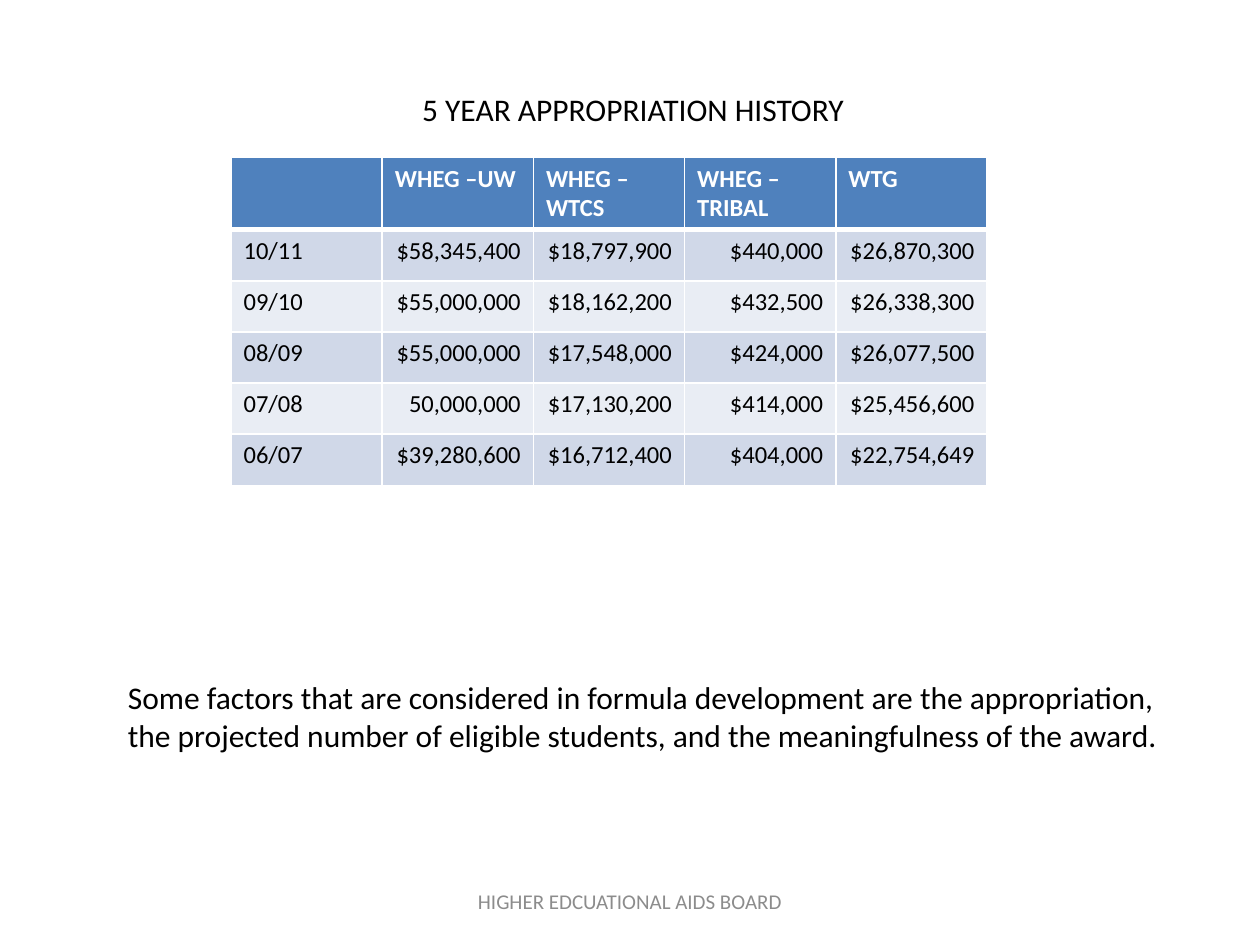
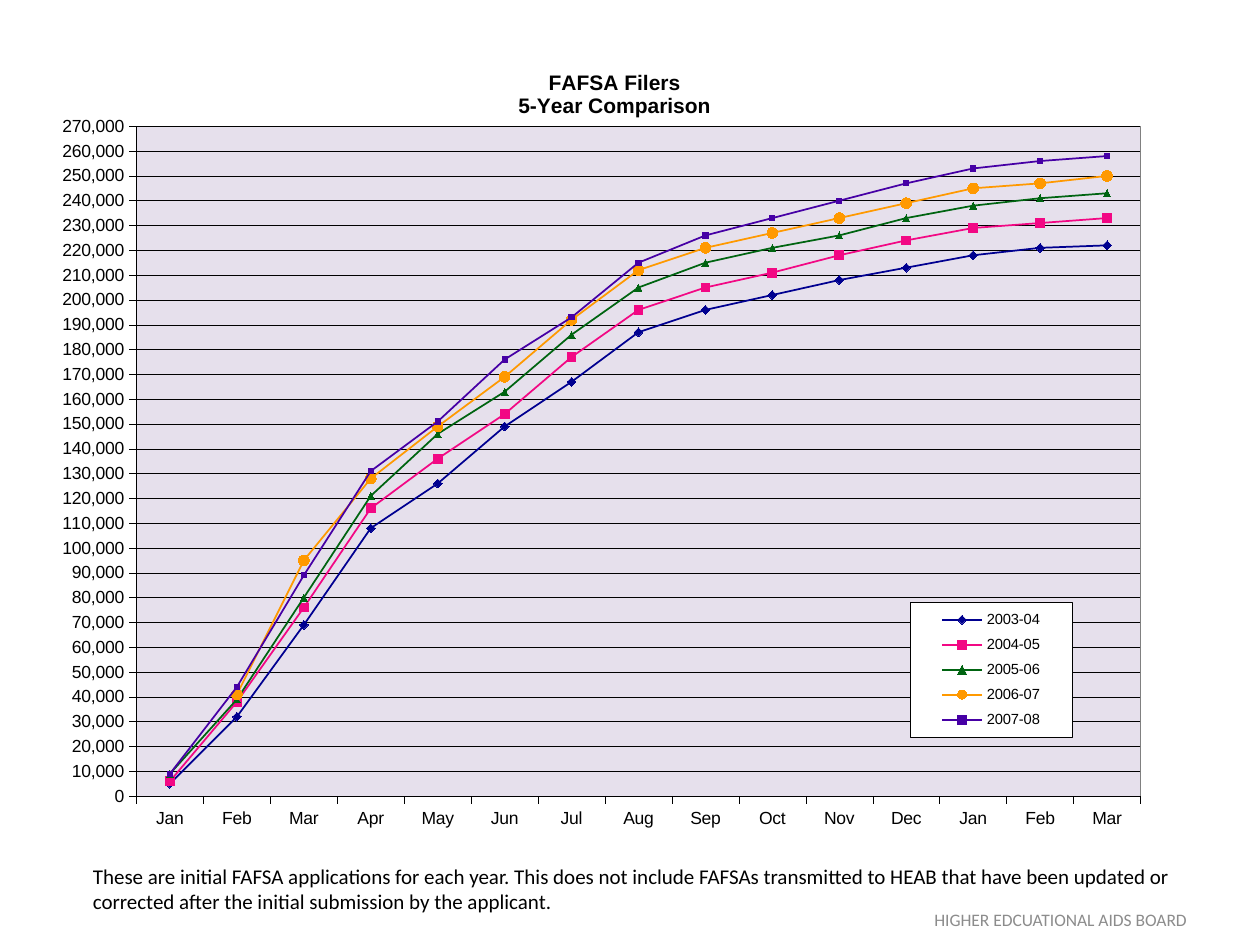
from lxml.etree import Element, SubElement
from pptx import Presentation
from pptx.chart.data import CategoryChartData
from pptx.dml.color import RGBColor
from pptx.enum.chart import XL_CHART_TYPE, XL_LEGEND_POSITION, XL_MARKER_STYLE, XL_TICK_MARK
from pptx.enum.text import MSO_ANCHOR, MSO_AUTO_SIZE, PP_ALIGN
from pptx.oxml.ns import qn
from pptx.util import Pt

COLORS = {
    "text": "000000", "footer": "8C8C8C", "white": "FFFFFF",
    "header": "4F81BD", "odd": "D0D8E8", "even": "E9EDF4",
    "plot": "E6E0EC", "plot_edge": "808080",
    "navy": "000090", "pink": "F20884", "green": "006411",
    "orange": "FF9900", "violet": "4600A5",
}
FOOTER = "HIGHER EDCUATIONAL AIDS BOARD"

HEADINGS = ["", "WHEG –UW", "WHEG – WTCS", "WHEG – TRIBAL", "WTG"]
APPROPRIATIONS = [
    ["10/11", "$58,345,400", "$18,797,900", "$440,000", "$26,870,300"],
    ["09/10", "$55,000,000", "$18,162,200", "$432,500", "$26,338,300"],
    ["08/09", "$55,000,000", "$17,548,000", "$424,000", "$26,077,500"],
    ["07/08", "50,000,000", "$17,130,200", "$414,000", "$25,456,600"],
    ["06/07", "$39,280,600", "$16,712,400", "$404,000", "$22,754,649"],
]

MONTHS = "Jan Feb Mar Apr May Jun Jul Aug Sep Oct Nov Dec Jan Feb Mar".split()
# Name, colour, marker, marker size, filers in thousands
FILERS = [
    ("2003-04", "navy", "DIAMOND", 5,
     [5, 32, 69, 108, 126, 149, 167, 187, 196, 202, 208, 213, 218, 221, 222]),
    ("2004-05", "pink", "SQUARE", 5,
     [6, 38, 76, 116, 136, 154, 177, 196, 205, 211, 218, 224, 229, 231, 233]),
    ("2005-06", "green", "TRIANGLE", 4,
     [9, 39, 80, 121, 146, 163, 186, 205, 215, 221, 226, 233, 238, 241, 243]),
    ("2006-07", "orange", "CIRCLE", 6,
     [None, 41, 95, 128, 149, 169, 192, 212, 221, 227, 233, 239, 245, 247, 250]),
    ("2007-08", "violet", "SQUARE", 3,
     [9, 44, 89, 131, 151, 176, 193, 215, 226, 233, 240, 247, 253, 256, 258]),
]


def rgb(name):
    return RGBColor.from_string(COLORS[name])


def style_font(font, size, color="text", name="Calibri", bold=False):
    font.size, font.name, font.bold = Pt(size), name, bold
    font.color.rgb = rgb(color)


def write(tf, text, align=PP_ALIGN.LEFT, **style):
    """Write each line of text as a paragraph in one format."""
    for i, line in enumerate(text.split("\n")):
        p = tf.add_paragraph() if i else tf.paragraphs[0]
        p.alignment = align
        r = p.add_run()
        r.text = line
        style_font(r.font, **style)


def add_fill(parent, color):
    fill = SubElement(parent, qn("a:solidFill"))
    SubElement(fill, qn("a:srgbClr"), val=COLORS[color])


def set_layout(part, index, **fractions):
    """Place a chart part by fractions of the chart area."""
    for old in part.findall(qn("c:layout")):
        part.remove(old)
    layout = Element(qn("c:layout"))
    manual = SubElement(layout, qn("c:manualLayout"))
    if "target" in fractions:
        SubElement(manual, qn("c:layoutTarget"), val=fractions.pop("target"))
    for mode in ("xMode", "yMode"):
        SubElement(manual, qn("c:" + mode), val="edge")
    for key, value in fractions.items():
        SubElement(manual, qn("c:" + key), val=str(value))
    part.insert(index, layout)


def frame_after(element, fill, line):
    """Add a fill and thin outline to a chart part, after its given child."""
    sp_pr = Element(qn("c:spPr"))
    add_fill(sp_pr, fill)
    add_fill(SubElement(sp_pr, qn("a:ln"), w=str(Pt(0.25))), line)
    element.addnext(sp_pr)


class Deck:
    def __init__(self):
        self.prs = Presentation()
        self.prs.slide_width, self.prs.slide_height = Pt(720), Pt(540)
        self.s = None

    def slide(self, titled=False):
        self.s = self.prs.slides.add_slide(self.prs.slide_layouts[5 if titled else 6])

    def title(self, text, x, y, w, h):
        sp = self.s.shapes.title
        sp.left, sp.top, sp.width, sp.height = Pt(x), Pt(y), Pt(w), Pt(h)
        tf = sp.text_frame
        tf.word_wrap, tf.auto_size = False, MSO_AUTO_SIZE.NONE
        tf.vertical_anchor = MSO_ANCHOR.TOP
        write(tf, text, size=18)

    def text(self, text, x, y, w, h, wrap=False, anchor=MSO_ANCHOR.TOP, **style):
        tf = self.s.shapes.add_textbox(Pt(x), Pt(y), Pt(w), Pt(h)).text_frame
        tf.word_wrap, tf.vertical_anchor = wrap, anchor
        write(tf, text, **style)

    def footer(self, x, y, size):
        self.text(FOOTER, x, y, 228, 28.8, wrap=True, anchor=MSO_ANCHOR.MIDDLE,
                  align=PP_ALIGN.CENTER, size=size, color="footer")

    def cell(self, cell, text, fill, bottom=1, **style):
        tc_pr = cell._tc.get_or_add_tcPr()
        for side, width in (("L", 1), ("R", 1), ("T", 1), ("B", bottom)):
            add_fill(SubElement(tc_pr, qn("a:ln" + side), w=str(Pt(width))), "white")
        cell.fill.solid()
        cell.fill.fore_color.rgb = rgb(fill)
        if text:
            write(cell.text_frame, text, size=14, **style)

    def table(self, headings, rows, x, y, col_w, row_h):
        n_rows, n_cols = len(rows) + 1, len(headings)
        table = self.s.shapes.add_table(n_rows, n_cols, Pt(x), Pt(y), Pt(col_w * n_cols),
                                        Pt(row_h * n_rows)).table
        for c, heading in enumerate(headings):
            self.cell(table.cell(0, c), heading, "header", bottom=3,
                      color="white", bold=True)
        for r, row in enumerate(rows, 1):
            for c, value in enumerate(row):
                self.cell(table.cell(r, c), value, "odd" if r % 2 else "even",
                          align=PP_ALIGN.RIGHT if c else PP_ALIGN.LEFT)

    def line_chart(self, title, cats, series, x, y, w, h):
        data = CategoryChartData(number_format="#,##0")
        data.categories = cats
        for name, *_, values in series:
            data.add_series(name, [v and v * 1000 for v in values])
        chart = self.s.shapes.add_chart(XL_CHART_TYPE.LINE_MARKERS, Pt(x), Pt(y),
                                        Pt(w), Pt(h), data).chart
        style_font(chart.font, 10, name="Arial")

        # Title
        chart.has_title = True
        write(chart.chart_title.text_frame, title, align=PP_ALIGN.CENTER,
              size=12, name="Arial", bold=True)
        set_layout(chart._chartSpace.find(".//" + qn("c:title")), 1, x=0.4, y=0.03)

        # Series
        chart.plots[0].vary_by_categories = False
        for ser, (_, color, marker, size, _) in zip(chart.plots[0].series, series):
            ser.smooth = False
            ser.format.line.width = Pt(1)
            ser.format.line.color.rgb = rgb(color)
            ser.marker.style, ser.marker.size = XL_MARKER_STYLE[marker], size
            ser.marker.format.fill.solid()
            ser.marker.format.fill.fore_color.rgb = rgb(color)
            ser.marker.format.line.color.rgb = rgb(color)

        # Axes and gridlines
        val = chart.value_axis
        val.minimum_scale, val.maximum_scale, val.major_unit = 0, 270000, 10000
        val.tick_labels.number_format = "#,##0"
        val.tick_labels.number_format_is_linked = False
        val.has_major_gridlines = True
        for axis in (chart.category_axis, val):
            axis.major_tick_mark = XL_TICK_MARK.OUTSIDE
            style_font(axis.tick_labels.font, 10, name="Arial")
        for part in (chart.category_axis, val, val.major_gridlines):
            part.format.line.width = Pt(0.25)
            part.format.line.color.rgb = rgb("text")

        # Plot area
        plot_area = chart._chartSpace.find(".//" + qn("c:plotArea"))
        set_layout(plot_area, 0, target="inner", x=0.08, y=0.105, w=0.85, h=0.834)
        frame_after(plot_area[-1], "plot", "plot_edge")

        # Legend
        chart.has_legend = True
        chart.legend.position = XL_LEGEND_POSITION.RIGHT
        chart.legend.include_in_layout = False
        style_font(chart.legend.font, 8.4, name="Arial")
        legend = chart._chartSpace.find(".//" + qn("c:legend"))
        set_layout(legend, 1, x=0.735, y=0.698, w=0.137, h=0.167)
        frame_after(legend.find(qn("c:overlay")), "white", "text")


def main():
    deck = Deck()

    # Appropriation history
    deck.slide(titled=True)
    deck.title("5 YEAR APPROPRIATION HISTORY", 234, 48, 258, 29)
    deck.table(HEADINGS, APPROPRIATIONS, 132, 90, 86.4, 29.2)
    deck.text("Some factors that are considered in formula development are the appropriation,\n"
              "the projected number of eligible students, and the meaningfulness of the award.",
              66, 384, 610.6, 51, size=18)
    deck.footer(246, 500.5, 12)

    # Filers by month
    deck.slide()
    deck.line_chart("FAFSA Filers\n5-Year Comparison", MONTHS, FILERS, 24, 24, 675, 459)
    deck.text("These are initial FAFSA applications for each year. This does not include "
              "FAFSAs transmitted to HEAB that have been updated or\n"
              "corrected after the initial submission by the applicant.",
              46, 490, 642, 36, size=12)
    deck.footer(492, 511.2, 10)

    deck.prs.save("out.pptx")


if __name__ == "__main__":
    main()
